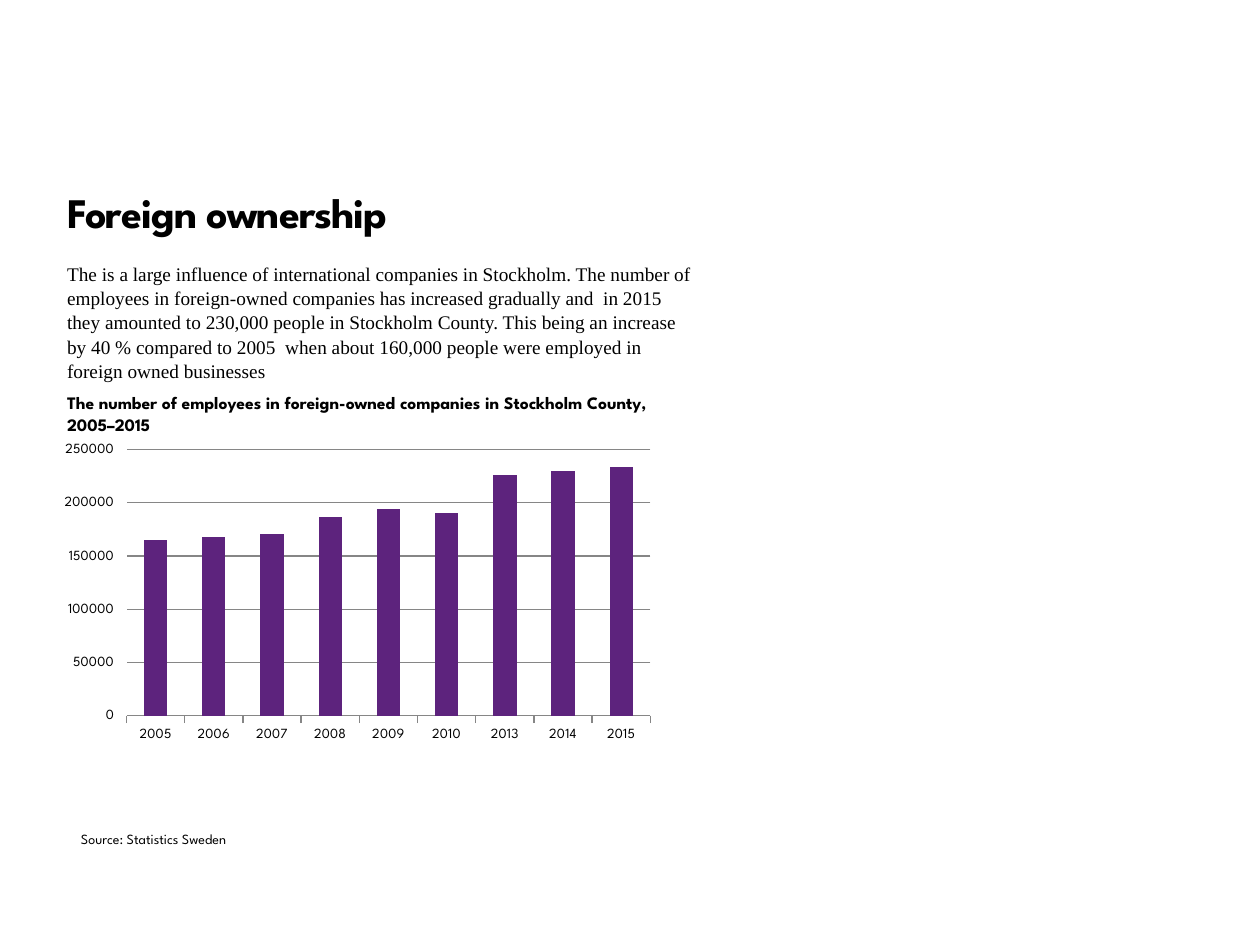
from lxml import etree
from pptx import Presentation
from pptx import util as u
from pptx.chart.data import CategoryChartData
from pptx.dml.color import RGBColor
from pptx.enum import chart as ch
from pptx.enum import text as t
from pptx.oxml import parse_xml
from pptx.oxml.ns import nsdecls, qn

PX = 914400 / 126
BLACK = RGBColor(0x00, 0x00, 0x00)
PURPLE = RGBColor(0x5D, 0x23, 0x7D)
GRAY = RGBColor(0x86, 0x86, 0x86)
SANS = "League Spartan"
SERIF = "Times New Roman"

YEARS = ["2005", "2006", "2007", "2008", "2009", "2010", "2013", "2014", "2015"]
STAFF = [165000, 168000, 171000, 187000, 194000, 190000, 226000, 230000, 234000]
INTRO = (
    "The is a large influence of international companies in Stockholm. "
    "The number of employees in foreign-owned companies has increased "
    "gradually and  in 2015 they amounted to 230,000 people in Stockholm "
    "County. This being an increase by 40 % compared to 2005  when about "
    "160,000 people were employed in foreign owned businesses"
)


def px(*nums):
    return [u.Emu(round(n * PX)) for n in nums]


def set_font(font, size, name=SANS, bold=False):
    font.size, font.name, font.bold = u.Pt(size), name, bold
    font.color.rgb = BLACK


def fill_text(shape, box, words, size, name=SANS, bold=False, pitch=1.05):
    """Place a text shape without insets or bullet and write one paragraph."""
    shape.left, shape.top, shape.width, shape.height = px(*box)
    frame = shape.text_frame
    frame.margin_left = frame.margin_right = 0
    frame.margin_top = frame.margin_bottom = 0
    frame.word_wrap = True
    frame.auto_size = t.MSO_AUTO_SIZE.NONE
    frame.vertical_anchor = t.MSO_ANCHOR.TOP
    para = frame.paragraphs[0]
    para.text = words
    para.alignment = t.PP_ALIGN.LEFT
    para.line_spacing = pitch
    para.space_before = u.Pt(0)
    props = para._p.get_or_add_pPr()
    props.set("marL", "0")
    props.set("indent", "0")
    etree.SubElement(props, qn("a:buNone"))
    set_font(para.font, size, name, bold)
    return para


def set_plot(chart, x, y, w, h):
    """Fix the inner plot area as fractions of the chart."""
    area = chart._chartSpace.chart.plotArea
    for old in area.findall(qn("c:layout")):
        area.remove(old)
    vals = "".join(
        f'<c:{tag} val="{val}"/>' for tag, val in zip("xywh", (x, y, w, h))
    )
    area.insert(0, parse_xml(
        f'<c:layout {nsdecls("c")}><c:manualLayout>'
        '<c:layoutTarget val="inner"/><c:xMode val="edge"/>'
        f'<c:yMode val="edge"/>{vals}</c:manualLayout></c:layout>'
    ))


def add_bars(slide, box):
    data = CategoryChartData()
    data.categories = YEARS
    data.add_series("Series 1", STAFF)
    chart = slide.shapes.add_chart(
        ch.XL_CHART_TYPE.COLUMN_CLUSTERED, *px(*box), data
    ).chart
    chart.has_legend = chart.has_title = False
    set_font(chart.font, 8, "Arial")
    set_plot(chart, 0.146, 0.024, 0.854, 0.829)

    plot = chart.plots[0]
    plot.gap_width = 150
    plot.vary_by_categories = False
    fill = plot.series[0].format.fill
    fill.solid()
    fill.fore_color.rgb = PURPLE

    years, count = chart.category_axis, chart.value_axis
    for axis in (years, count):
        axis.major_tick_mark = ch.XL_TICK_MARK.OUTSIDE
        set_font(axis.tick_labels.font, 8)
    count.minimum_scale, count.maximum_scale = 0, 250000
    count.major_unit = 50000
    count.has_major_gridlines = True
    count.format.line.fill.background()
    for line in (years.format.line, count.major_gridlines.format.line):
        line.color.rgb = GRAY
        line.width = u.Pt(0.75)


def main():
    prs = Presentation()
    prs.slide_width, prs.slide_height = u.Inches(10), u.Inches(7.5)
    slide = prs.slides.add_slide(prs.slide_layouts[3])
    title, intro, label = slide.placeholders

    head = fill_text(title, (67, 188, 891, 111), "Foreign ownership", 24,
                     bold=True, pitch=u.Pt(28))
    head.runs[0]._r.get_or_add_rPr().set("spc", "-50")
    fill_text(intro, (67, 261, 629, 145), INTRO, 11, SERIF)
    fill_text(label, (67, 391, 629, 53),
              "The number of employees in foreign-owned companies in "
              "Stockholm County, 2005–2015", 10, bold=True)
    box = (81, 830, 199, 53)
    fill_text(slide.shapes.add_textbox(*px(*box)), box,
              "Source: Statistics Sweden", 8)
    add_bars(slide, (37, 442, 614, 321))
    prs.save("out.pptx")


if __name__ == "__main__":
    main()
